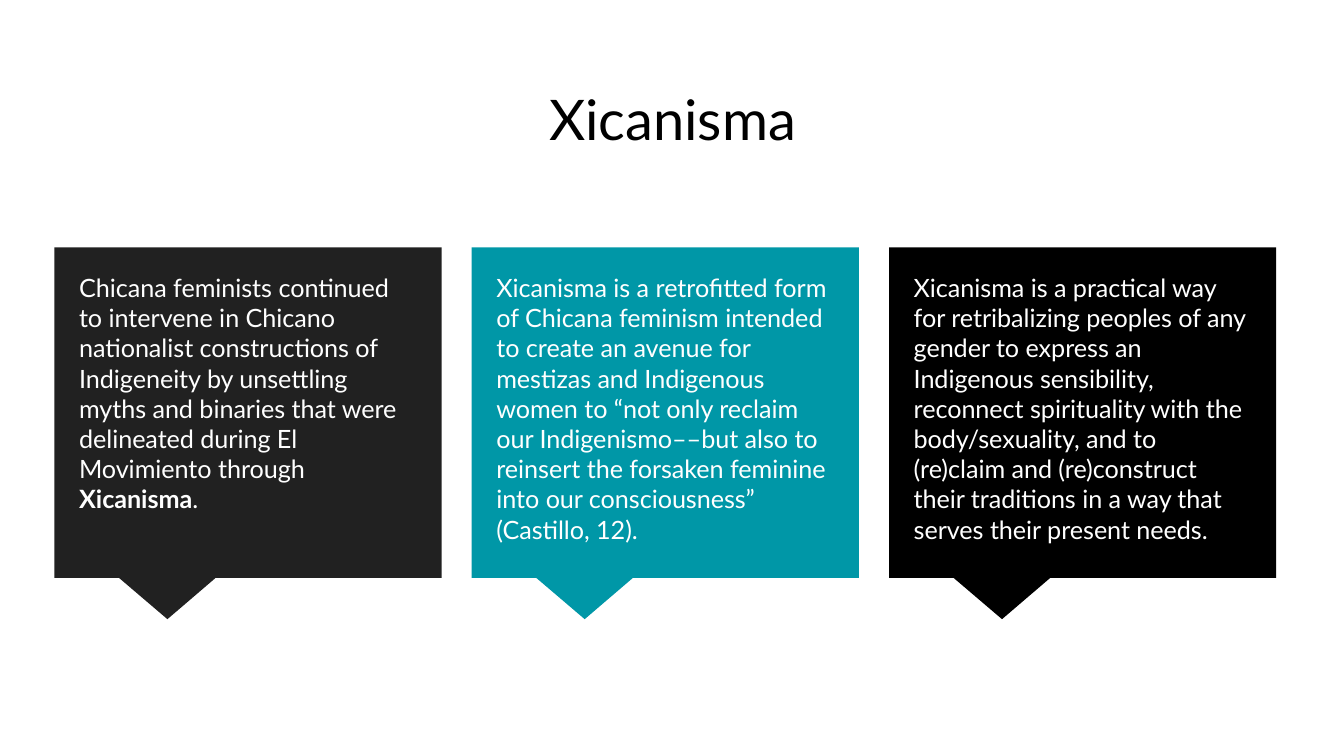
from dataclasses import dataclass

from pptx import Presentation
from pptx.dml.color import RGBColor
from pptx.enum.shapes import MSO_SHAPE
from pptx.enum.text import MSO_ANCHOR, PP_ALIGN
from pptx.util import Emu, Pt

PX = 4572  # EMU per px, 200 px to the inch


@dataclass(frozen=True)
class Theme:
    font: str = "Lato"
    title_size: float = 30
    body_size: float = 13.5
    title_color: str = "000000"
    body_color: str = "FFFFFF"
    dark: str = "212121"
    teal: str = "0097A7"
    black: str = "000000"


theme = Theme()


def px(*lengths):
    """Turn px lengths into a list of EMU lengths."""
    return [Emu(length * PX) for length in lengths]


def add_text(slide, box, runs, *, size, color, align=PP_ALIGN.LEFT,
             anchor=MSO_ANCHOR.TOP, space=0):
    """Add a one-paragraph text box; runs are (text, bold) pairs."""
    frame = slide.shapes.add_textbox(*px(*box)).text_frame
    frame.word_wrap = True
    frame.vertical_anchor = anchor
    (frame.margin_left, frame.margin_top,
     frame.margin_right, frame.margin_bottom) = px(20, 20, 20, 20)
    paragraph = frame.paragraphs[0]
    paragraph.alignment = align
    paragraph.space_before = paragraph.space_after = Pt(space)
    for text, bold in runs:
        run = paragraph.add_run()
        run.text = text
        run.font.name = theme.font
        run.font.size = Pt(size)
        run.font.bold = bold
        run.font.color.rgb = RGBColor.from_string(color)


presentation = Presentation()
presentation.slide_width, presentation.slide_height = px(2000, 1125)
slide = presentation.slides.add_slide(presentation.slide_layouts[6])

add_text(slide, (58, 64, 1886, 224), [("Xicanisma", False)],
         size=theme.title_size, color=theme.title_color,
         align=PP_ALIGN.CENTER, anchor=MSO_ANCHOR.MIDDLE)

cards = [
    (theme.dark, [
        ("Chicana feminists continued to intervene in Chicano nationalist "
         "constructions of Indigeneity by unsettling myths and binaries that "
         "were delineated during El Movimiento through ", False),
        ("Xicanisma", True),
        (".", False),
    ]),
    (theme.teal, [
        ("Xicanisma is a retrofitted form of Chicana feminism intended to "
         "create an avenue for mestizas and Indigenous women to “not only "
         "reclaim our Indigenismo––but also to reinsert the forsaken feminine "
         "into our consciousness” (Castillo, 12).", False),
    ]),
    (theme.black, [
        ("Xicanisma is a practical way for retribalizing peoples of any gender "
         "to express an Indigenous sensibility, reconnect spirituality with "
         "the body/sexuality, and to (re)claim and (re)construct their "
         "traditions in a way that serves their present needs.", False),
    ]),
]

CARD_LEFT, CARD_TOP, CARD_WIDTH, CARD_HEIGHT = 81, 368, 576, 492
CARD_PITCH = 621
TEXT_INSET = 17

for index, (fill, runs) in enumerate(cards):
    left = CARD_LEFT + index * CARD_PITCH
    callout = slide.shapes.add_shape(
        MSO_SHAPE.RECTANGULAR_CALLOUT,
        *px(left, CARD_TOP, CARD_WIDTH, CARD_HEIGHT))
    callout.adjustments[0] = -0.208
    callout.adjustments[1] = 0.625
    callout.shadow.inherit = False
    callout.fill.solid()
    callout.fill.fore_color.rgb = RGBColor.from_string(fill)
    callout.line.fill.background()
    add_text(slide,
             (left + TEXT_INSET, CARD_TOP + TEXT_INSET,
              CARD_WIDTH - 2 * TEXT_INSET, 438),
             runs, size=theme.body_size, color=theme.body_color, space=12)

presentation.save("out.pptx")
